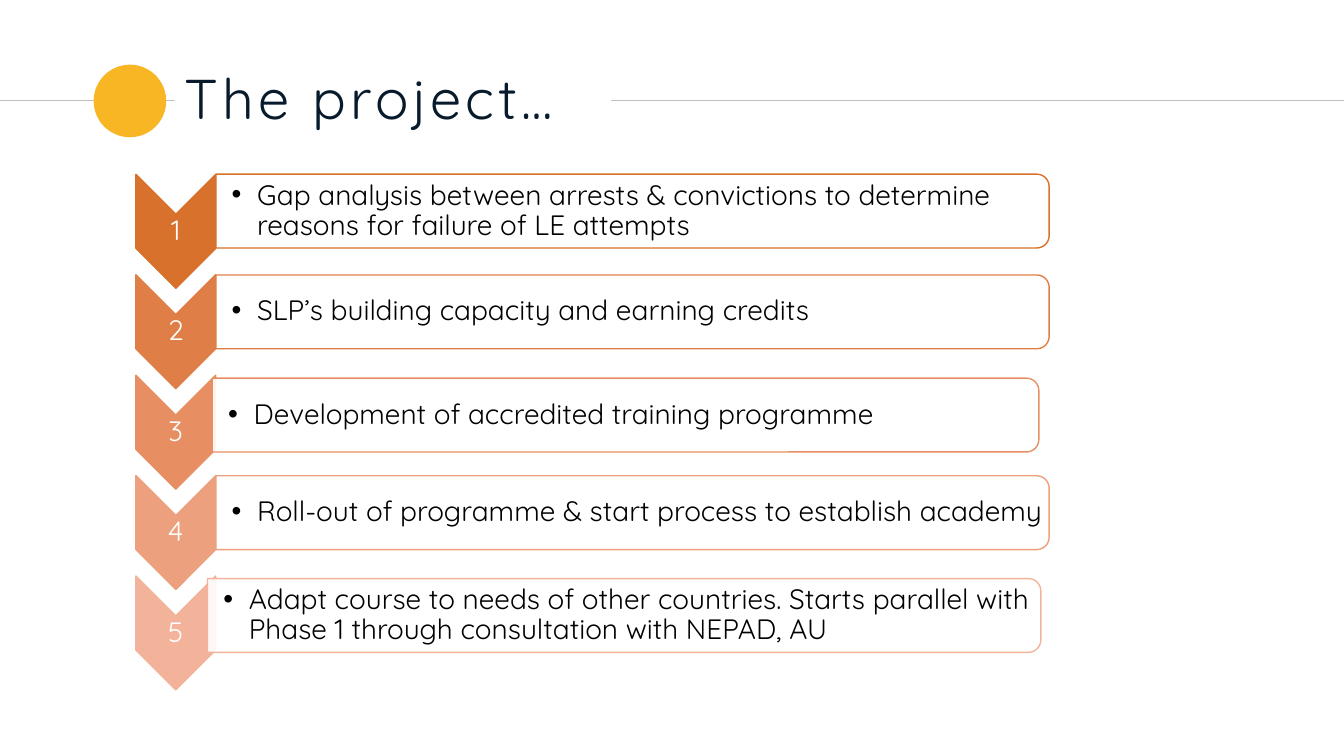
"""Build the project phases slide."""
from dataclasses import dataclass

from lxml.etree import SubElement
from pptx import Presentation
from pptx.dml.color import RGBColor
from pptx.enum.shapes import MSO_CONNECTOR as Connector, MSO_SHAPE as Preset
from pptx.enum.text import MSO_ANCHOR as Anchor, PP_ALIGN as Align
from pptx.oxml.ns import qn
from pptx.shapes.autoshape import Shape
from pptx.slide import Slide
from pptx.util import Cm, Pt

FONT = "Quicksand"
FIRST_CHEVRON_Y = 5.83
CHEVRON_PITCH = 2.53
CHEVRON_X = 4.43
HANGING = 0.64


@dataclass
class Phase:
    text: str
    hue: str
    left: float
    middle: float
    width: float = 21.0


@dataclass
class Area:
    left: float
    top: float
    width: float
    height: float

    def lengths(self) -> list[Cm]:
        return [Cm(value) for value in (self.left, self.top, self.width, self.height)]


PHASES = [
    Phase("Gap analysis between arrests & convictions to determine reasons for failure of LE attempts",
          "D7712C", 5.44, 5.32),
    Phase("SLP’s building capacity and earning credits", "DF7F47", 5.44, 7.86),
    Phase("Development of accredited training programme", "E78F62", 5.35, 10.46, 20.83),
    Phase("Roll-out of programme & start process to establish academy", "EDA07E", 5.44, 12.92),
    Phase("Adapt course to needs of other countries. Starts parallel with Phase 1 "
          "through consultation with NEPAD, AU", "F3B39B", 5.23, 15.51),
]


def color(value: str) -> RGBColor:
    return RGBColor.from_string(value)


def centered(x: float, y: float, width: float, height: float) -> Area:
    return Area(x - width / 2, y - height / 2, width, height)


def add_preset(page: Slide, preset: Preset, area: Area, fill: str,
               outline: str | None = None, rotation: float = 0) -> Shape:
    shape = page.shapes.add_shape(preset, *area.lengths())
    shape.shadow.inherit = False
    shape.rotation = rotation
    shape.fill.solid()
    shape.fill.fore_color.rgb = color(fill)
    if outline:
        shape.line.color.rgb = color(outline)
        shape.line.width = Pt(1)
    else:
        shape.line.fill.background()
    return shape


def add_text(page: Slide, area: Area, text: str, hue: str, size: float = 20,
             align: Align = Align.LEFT, insets: tuple[float, ...] = (0.03,) * 4,
             bullet: bool = False, tracking: int = 0) -> Shape:
    box = page.shapes.add_textbox(*area.lengths())
    frame = box.text_frame
    left, top, right, bottom = (Cm(inset) for inset in insets)
    frame_format = {"word_wrap": True, "vertical_anchor": Anchor.MIDDLE, "margin_left": left,
                    "margin_top": top, "margin_right": right, "margin_bottom": bottom}
    para = frame.paragraphs[0]
    para_format = {"alignment": align, "line_spacing": 0.9}
    span = para.add_run()
    span.text = text
    span_format = {"name": FONT, "size": Pt(size)}
    for target, values in ((frame, frame_format), (para, para_format), (span.font, span_format)):
        for name, value in values.items():
            setattr(target, name, value)
    span.font.color.rgb = color(hue)
    if bullet:
        properties = para._p.get_or_add_pPr()
        properties.set("marL", str(Cm(HANGING)))
        properties.set("indent", str(-Cm(HANGING)))
        SubElement(properties, qn("a:buFont")).set("typeface", "Arial")
        SubElement(properties, qn("a:buChar")).set("char", "•")
    if tracking:
        span._r.get_or_add_rPr().set("spc", str(tracking))
    return box


def add_heading(page: Slide, width: Cm) -> None:
    rule = page.shapes.add_connector(Connector.STRAIGHT, 0, Cm(2.54), width, Cm(2.54))
    rule.line.color.rgb = color("BFBFBF")
    rule.line.width = Pt(0.5)
    SubElement(rule._element.spPr, qn("a:effectLst"))
    add_preset(page, Preset.OVAL, Area(2.36, 1.63, 1.83, 1.83), "F8B624")
    title = add_text(page, Area(4.4, 0.71, 11.0, 3.68), "The project…", "081B2C", 40,
                     insets=(0.25, 0.13, 0.25, 0.13), tracking=300)
    title.fill.solid()
    title.fill.fore_color.rgb = color("FFFFFF")


def add_phase(page: Slide, index: int, phase: Phase) -> None:
    chevron_y = FIRST_CHEVRON_Y + index * CHEVRON_PITCH
    add_preset(page, Preset.CHEVRON, centered(CHEVRON_X, chevron_y, 2.87, 2.01),
               phase.hue, phase.hue, 90)
    add_text(page, centered(CHEVRON_X, chevron_y, 2.01, 0.86), str(index + 1), "FFFFFF",
             align=Align.CENTER)
    panel = add_preset(page, Preset.ROUND_2_SAME_RECTANGLE,
                       centered(phase.left + phase.width / 2, phase.middle, 1.86, phase.width),
                       "FFFFFF", phase.hue, 90)
    fill = panel._element.spPr.find(qn("a:solidFill"))
    SubElement(fill[0], qn("a:alpha")).set("val", "90000")
    add_text(page, Area(phase.left, phase.middle - 0.84, phase.width - 0.09, 1.68), phase.text,
             "000000", insets=(0.4, 0.03, 0.03, 0.03), bullet=True)


def main() -> None:
    deck = Presentation()
    deck.slide_width, deck.slide_height = Cm(33.87), Cm(19.05)
    page = deck.slides.add_slide(deck.slide_layouts[6])
    add_heading(page, deck.slide_width)
    for index, phase in enumerate(PHASES):
        add_phase(page, index, phase)
    deck.save("out.pptx")


if __name__ == "__main__":
    main()
